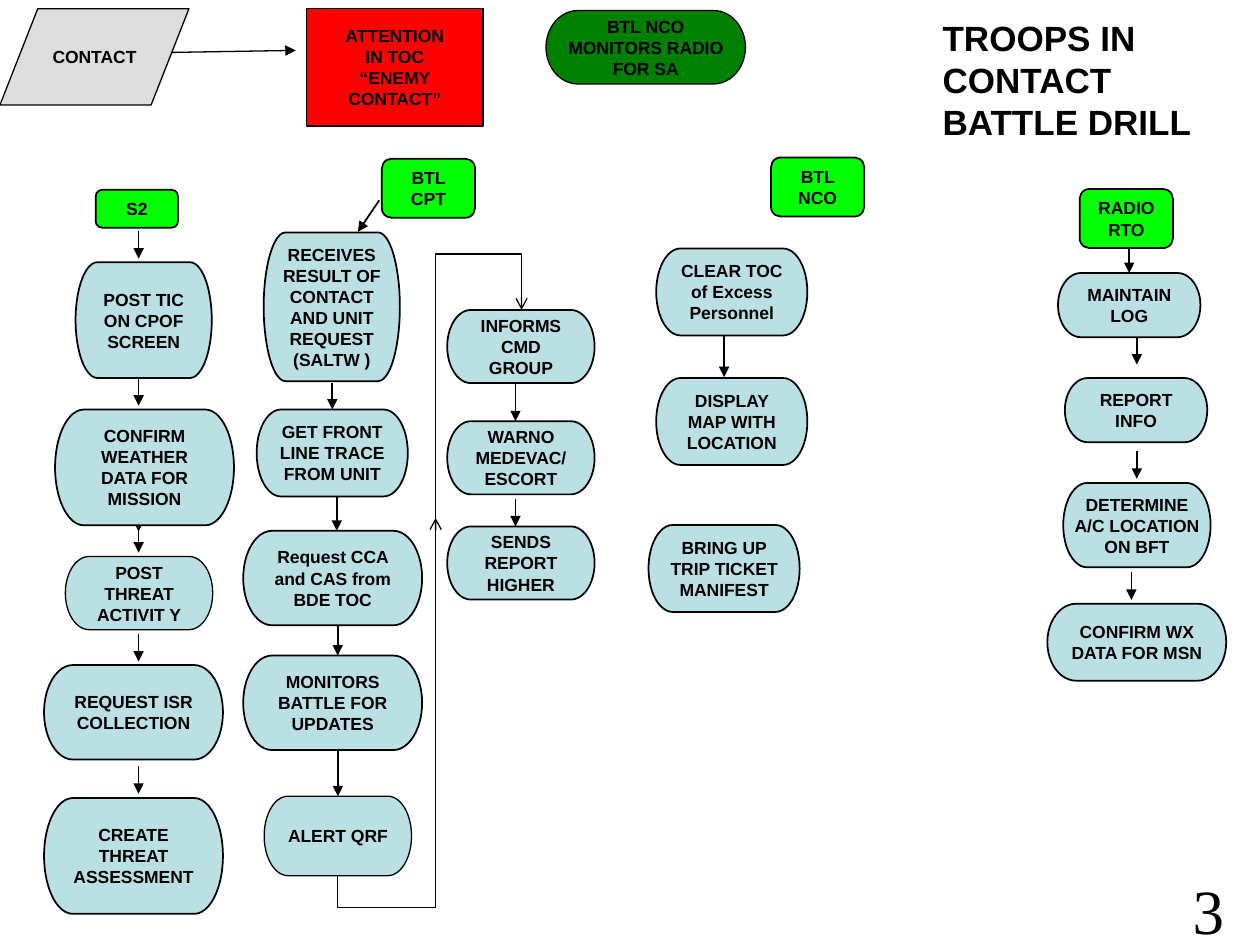
from dataclasses import dataclass
from typing import Any

import pptx
import pptx.dml.color
import pptx.enum.shapes
import pptx.enum.text
import pptx.oxml
import pptx.oxml.ns
import pptx.util
from lxml import etree

Pt = pptx.util.Pt
RGBColor = pptx.dml.color.RGBColor
Shape = pptx.enum.shapes.MSO_SHAPE
Connector = pptx.enum.shapes.MSO_CONNECTOR
Anchor = pptx.enum.text.MSO_ANCHOR
Align = pptx.enum.text.PP_ALIGN
qn = pptx.oxml.ns.qn

BLACK = RGBColor(0, 0, 0)
RED = RGBColor(0xFF, 0, 0)
GREEN = RGBColor(0, 0xFF, 0)
DARK_GREEN = RGBColor(0, 0x80, 0)
GREY = RGBColor(0xDD, 0xDD, 0xDD)
PALE_BLUE = RGBColor(0xBB, 0xE0, 0xE3)

THIN, NORMAL = 0.75, 1
LABEL_FONT = {"name": "Arial", "size": Pt(10), "bold": True}
TITLE_FONT = {"name": "Arial", "size": Pt(20), "bold": True}
NUMBER_FONT = {"name": "Times New Roman", "size": Pt(36), "bold": False}

WIDE_TALL = (102.2, 66.2)
WIDE = (102.2, 54)
MEDIUM = (86.4, 49.7)
SMALL = (84.2, 41.8)
LOG = (81.4, 36.7)
ROLE = (53.3, 33.8)


@dataclass
class Step:
    text: str
    left: float
    top: float
    size: tuple[float, float]
    fill: RGBColor = PALE_BLUE
    outline: Any = Shape.FLOWCHART_TERMINATOR
    weight: float = NORMAL
    side_inset: float = 7.2


@dataclass
class Arrow:
    start: tuple[float, float]
    end: tuple[float, float]
    weight: float = NORMAL
    into: str = ""


@dataclass
class Elbow:
    """Runs from lower left to upper right; bend is the turn's share of the rise."""
    start: tuple[float, float]
    end: tuple[float, float]
    bend: float


def role(text: str, left: float, top: float, size: tuple[float, float] = ROLE) -> Step:
    return Step(text, left, top, size, GREEN, Shape.FLOWCHART_ALTERNATE_PROCESS)


STEPS = [
    Step("CONTACT", 0, 5, (108, 55), GREY, Shape.FLOWCHART_DATA, THIN),
    Step("ATTENTION\nIN TOC\n“ENEMY CONTACT”", 175, 5, (101, 67), RED,
         Shape.FLOWCHART_PROCESS, THIN),
    Step("BTL NCO MONITORS RADIO FOR SA", 312, 6, (114, 42), DARK_GREEN, weight=THIN),
    role("S2", 54.7, 108.5, (47, 21.6)),
    Step("POST TIC ON CPOF SCREEN", 43.2, 149.8, (77.8, 66.2)),
    Step("CONFIRM WEATHER DATA FOR MISSION", 31.5, 234, WIDE_TALL, side_inset=11),
    Step("POST THREAT ACTIVIT Y", 37.4, 318, SMALL, weight=THIN),
    Step("REQUEST ISR COLLECTION", 25.2, 380, WIDE),
    Step("CREATE THREAT ASSESSMENT", 25.2, 456, WIDE_TALL),
    role("BTL CPT", 218.2, 90.7),
    Step("RECEIVES RESULT OF CONTACT AND UNIT REQUEST\n(SALTW )", 150.7, 132.8, (77.8, 85)),
    Step("GET FRONT LINE TRACE FROM UNIT", 146.7, 234, MEDIUM),
    Step("Request CCA and CAS from BDE TOC", 139, 303.3, WIDE),
    Step("MONITORS BATTLE FOR UPDATES", 139, 374.6, WIDE),
    Step("ALERT QRF", 151, 455, (84.2, 45.4), weight=THIN),
    Step("INFORMS CMD GROUP", 255.6, 177.1, SMALL, side_inset=10),
    Step("WARNO MEDEVAC/ ESCORT", 255.6, 240.7, SMALL),
    Step("SENDS REPORT HIGHER", 255.6, 300.8, SMALL),
    role("BTL NCO", 440.6, 90),
    Step("CLEAR TOC of Excess Personnel", 375, 142, MEDIUM),
    Step("DISPLAY MAP WITH LOCATION", 375, 216, MEDIUM),
    Step("BRING UP TRIP TICKET MANIFEST", 370.6, 300, MEDIUM),
    role("RADIO RTO", 617, 108),
    Step("MAINTAIN LOG", 604.6, 156, LOG),
    Step("REPORT INFO", 608.5, 216, LOG),
    Step("DETERMINE A/C LOCATION ON BFT", 607.6, 276, (84.2, 48.2), side_inset=0),
    Step("CONFIRM WX DATA FOR MSN", 598.5, 345, (102.2, 44)),
]

SHORT_ARROW = 15.8
SHORT_ARROW_STARTS = [
    *((79.2, y) for y in (132, 216, 288, 300, 362.2, 437.8)),
    *((649.6, y) for y in (192.5, 257.8)),
    (646.5, 327),
    (294.6, 285),
]
ARROWS = [Arrow((x, y), (x, y + SHORT_ARROW)) for x, y in SHORT_ARROW_STARTS] + [
    Arrow((96, 30), (169, 28.8), THIN),
    Arrow((216.7, 114.5), (204.5, 132.5)),
    Arrow((192.5, 283.7), (192.5, 303.3)),
    Arrow((193, 353.5), (193, 374.6)),
    Arrow((294.6, 219.6), (294.6, 240.7)),
    Arrow((413.8, 192), (413.8, 215.5)),
    Arrow((189.9, 219), (189.9, 234), into="GET FRONT LINE TRACE FROM UNIT"),
    Arrow((193.1, 428.6), (193.1, 455), into="ALERT QRF"),
    Arrow((645.3, 141.8), (645.3, 156), into="MAINTAIN LOG"),
]
ELBOWS = [
    Elbow((193, 500.4), (249, 296), -0.09),
    Elbow((249, 300), (298, 177.1), 1.26),
]


def write(frame: Any, text: str, font: dict[str, Any], align: Any) -> None:
    frame.text = text
    for paragraph in frame.paragraphs:
        paragraph.alignment = align
        for run in paragraph.runs:
            run.font.color.rgb = BLACK
            for key, value in font.items():
                setattr(run.font, key, value)


def draw_step(slide: Any, step: Step) -> Any:
    width, height = step.size
    box = slide.shapes.add_shape(step.outline, Pt(step.left), Pt(step.top), Pt(width), Pt(height))
    box.shadow.inherit = False
    box.fill.solid()
    box.fill.fore_color.rgb = step.fill
    box.line.color.rgb = BLACK
    box.line.width = Pt(step.weight)
    layout = {"word_wrap": True, "vertical_anchor": Anchor.MIDDLE,
              "margin_top": 0, "margin_bottom": 0,
              "margin_left": Pt(step.side_inset), "margin_right": Pt(step.side_inset)}
    for key, value in layout.items():
        setattr(box.text_frame, key, value)
    write(box.text_frame, step.text, LABEL_FONT, Align.CENTER)
    return box


def finish_line(connector: Any, weight: float, head: str) -> None:
    connector.line.color.rgb = BLACK
    connector.line.width = Pt(weight)
    properties = connector._element.spPr
    etree.SubElement(properties.find(qn("a:ln")), qn("a:tailEnd"), type=head)
    etree.SubElement(properties, qn("a:effectLst"))


def draw_arrow(slide: Any, arrow: Arrow, boxes: dict[str, Any]) -> None:
    line = slide.shapes.add_connector(
        Connector.STRAIGHT, *(Pt(value) for value in arrow.start + arrow.end))
    if arrow.into:
        line.end_connect(boxes[arrow.into], 0)
    finish_line(line, arrow.weight, "triangle")


def draw_elbow(slide: Any, elbow: Elbow) -> None:
    """Lay the connector on its side, then turn it so it leaves vertically."""
    (x1, y1), (x2, y2) = elbow.start, elbow.end
    across, rise = x2 - x1, y1 - y2
    left, top = (x1 + x2 - rise) / 2, (y1 + y2 - across) / 2
    line = slide.shapes.add_connector(
        Connector.ELBOW, Pt(left), Pt(top), Pt(left + rise), Pt(top + across))
    properties = line._element.spPr
    for key, value in {"rot": "5400000", "flipH": "1", "flipV": "1"}.items():
        properties.find(qn("a:xfrm")).set(key, value)
    adjustments = properties.find(qn("a:prstGeom")).find(qn("a:avLst"))
    etree.SubElement(adjustments, qn("a:gd"), name="adj1",
                     fmla=f"val {round(elbow.bend * 100000)}")
    finish_line(line, THIN, "arrow")


def main() -> None:
    deck = pptx.Presentation()
    deck.slide_width, deck.slide_height = Pt(720), Pt(540)
    slide = deck.slides.add_slide(deck.slide_layouts[5])

    title = slide.shapes.title
    for key, value in {"left": 531.4, "top": 6, "width": 180, "height": 85}.items():
        setattr(title, key, Pt(value))
    write(title.text_frame, "TROOPS IN CONTACT BATTLE DRILL", TITLE_FONT, Align.LEFT)
    title.text_frame.vertical_anchor = Anchor.TOP
    title.text_frame.auto_size = pptx.enum.text.MSO_AUTO_SIZE.NONE

    for arrow in ARROWS:
        if not arrow.into:
            draw_arrow(slide, arrow, {})
    boxes = {step.text: draw_step(slide, step) for step in STEPS}
    for arrow in ARROWS:
        if arrow.into:
            draw_arrow(slide, arrow, boxes)
    for elbow in ELBOWS:
        draw_elbow(slide, elbow)

    page_number = slide.shapes.add_textbox(Pt(661), Pt(494.6), Pt(59), Pt(45.4))
    page_number.text_frame.word_wrap = False
    write(page_number.text_frame, "3", NUMBER_FONT, Align.CENTER)
    deck.save("out.pptx")


if __name__ == "__main__":
    main()
